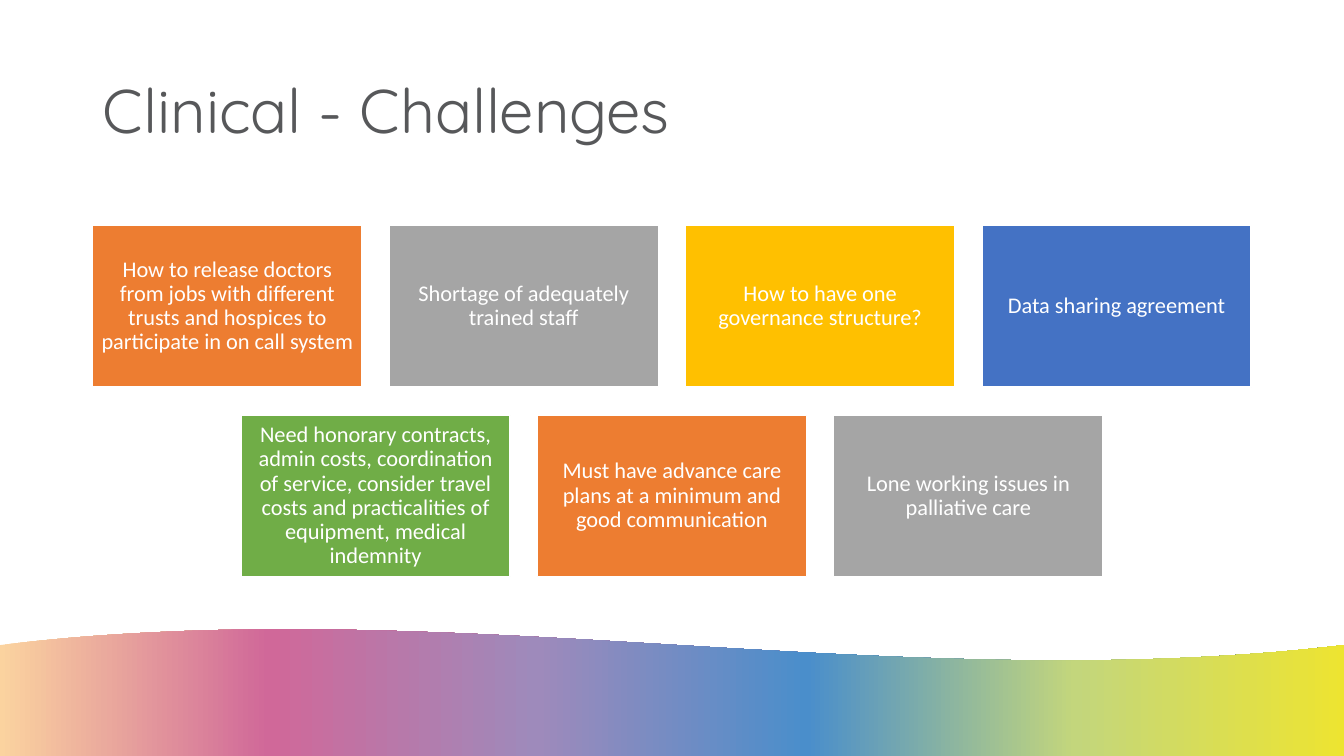
from dataclasses import dataclass

from lxml import etree
from pptx import Presentation
from pptx.dml.color import RGBColor
from pptx.enum.shapes import MSO_SHAPE
from pptx.enum.text import MSO_ANCHOR, MSO_AUTO_SIZE, PP_ALIGN
from pptx.oxml.ns import qn
from pptx.util import Inches, Pt

RECTANGLE = MSO_SHAPE.RECTANGLE
MIDDLE = MSO_ANCHOR.MIDDLE
NO_AUTOFIT = MSO_AUTO_SIZE.NONE
LEFT, CENTER = PP_ALIGN.LEFT, PP_ALIGN.CENTER
TITLE_ONLY_LAYOUT = 5


@dataclass(frozen=True)
class Theme:
    title_font: str = "Quicksand"
    body_font: str = "Calibri"
    title_size: int = 44
    card_size: int = 16
    title_color: str = "57585A"
    white: str = "FFFFFF"
    card_colors: tuple = ("ED7D31", "A5A5A5", "FFC000", "4472C4", "70AD47")
    wave_colors: tuple = ("FBD39F", "D06899", "9E8ABB", "4A8ECB", "C3D67C", "EDE431")


THEME = Theme()
SLIDE_WIDTH, SLIDE_HEIGHT = 13.33, 7.5
CARD_WIDTH, CARD_HEIGHT, CARD_GAP = 2.67, 1.6, 0.27
CARDS_TOP, ROW_STEP = 2.24, 1.88
WAVE_HEIGHTS = (6.4, 5.86, 6.93, 6.4)
WAVE_STEPS = 80

CARD_ROWS = (
    (
        "How to release doctors from jobs with different trusts and hospices "
        "to participate in on call system",
        "Shortage of adequately trained staff",
        "How to have one governance structure?",
        "Data sharing agreement",
    ),
    (
        "Need honorary contracts, admin costs, coordination of service, consider "
        "travel costs and practicalities of equipment, medical indemnity",
        "Must have advance care plans at a minimum and good communication",
        "Lone working issues in palliative care",
    ),
)


def write_text(shape, text, *, font, size, color, align, margins=(0.1, 0.05)):
    """Fill a shape with one paragraph; margins are horizontal, vertical inches."""
    frame = shape.text_frame
    frame.word_wrap = True
    frame.auto_size = NO_AUTOFIT
    frame.vertical_anchor = MIDDLE
    frame.margin_left = frame.margin_right = Inches(margins[0])
    frame.margin_top = frame.margin_bottom = Inches(margins[1])
    para = frame.paragraphs[0]
    para.alignment = align
    para.line_spacing = 0.9
    span = para.add_run()
    span.text = text
    span.font.name = font
    span.font.size = Pt(size)
    span.font.color.rgb = RGBColor.from_string(color)


def add_title(page, text):
    title = page.shapes.title
    title.left, title.top = Inches(0.92), Inches(0.4)
    title.width, title.height = Inches(8.35), Inches(1.45)
    write_text(title, text, font=THEME.title_font, size=THEME.title_size,
               color=THEME.title_color, align=LEFT)


def add_card(page, text, left, top, color):
    card = page.shapes.add_shape(RECTANGLE, Inches(left), Inches(top),
                                 Inches(CARD_WIDTH), Inches(CARD_HEIGHT))
    card.shadow.inherit = False
    card.fill.solid()
    card.fill.fore_color.rgb = RGBColor.from_string(color)
    card.line.color.rgb = RGBColor.from_string(THEME.white)
    card.line.width = Pt(1)
    write_text(card, text, font=THEME.body_font, size=THEME.card_size,
               color=THEME.white, align=CENTER, margins=(0.07, 0.07))


def add_card_rows(page, rows):
    """Centre each row on the slide and cycle the colours across all cards."""
    position = 0
    for row_number, row in enumerate(rows):
        row_width = len(row) * (CARD_WIDTH + CARD_GAP) - CARD_GAP
        row_left = (SLIDE_WIDTH - row_width) / 2
        for column, text in enumerate(row):
            color = THEME.card_colors[position % len(THEME.card_colors)]
            add_card(page, text, row_left + column * (CARD_WIDTH + CARD_GAP),
                     CARDS_TOP + row_number * ROW_STEP, color)
            position += 1


def wave_point(share):
    """Point of the cubic curve at a share of the slide's width."""
    start, first, second, end = WAVE_HEIGHTS
    rest = 1 - share
    height = (rest ** 3 * start + 3 * rest ** 2 * share * first
              + 3 * rest * share ** 2 * second + share ** 3 * end)
    return Inches(SLIDE_WIDTH * share), Inches(height)


def set_gradient(shape, colors):
    """Spread the colours evenly from left to right."""
    shape.fill.gradient()
    shape.fill.gradient_angle = 0
    stops = shape._element.spPr.find(".//" + qn("a:gsLst"))
    for stop in list(stops):
        stops.remove(stop)
    for index, color in enumerate(colors):
        place = round(100000 * index / (len(colors) - 1))
        stop = etree.SubElement(stops, qn("a:gs"), pos=str(place))
        etree.SubElement(stop, qn("a:srgbClr"), val=color)


def add_wave(page):
    curve = [wave_point(step / WAVE_STEPS) for step in range(WAVE_STEPS + 1)]
    corners = [(Inches(SLIDE_WIDTH), Inches(SLIDE_HEIGHT)), (0, Inches(SLIDE_HEIGHT))]
    builder = page.shapes.build_freeform(*curve[0])
    builder.add_line_segments(curve[1:] + corners, close=True)
    wave = builder.convert_to_shape()
    wave.shadow.inherit = False
    wave.line.fill.background()
    set_gradient(wave, THEME.wave_colors)


def main():
    deck = Presentation()
    deck.slide_width, deck.slide_height = Inches(SLIDE_WIDTH), Inches(SLIDE_HEIGHT)
    page = deck.slides.add_slide(deck.slide_layouts[TITLE_ONLY_LAYOUT])
    add_wave(page)
    add_title(page, "Clinical - Challenges")
    add_card_rows(page, CARD_ROWS)
    deck.save("out.pptx")


if __name__ == "__main__":
    main()
